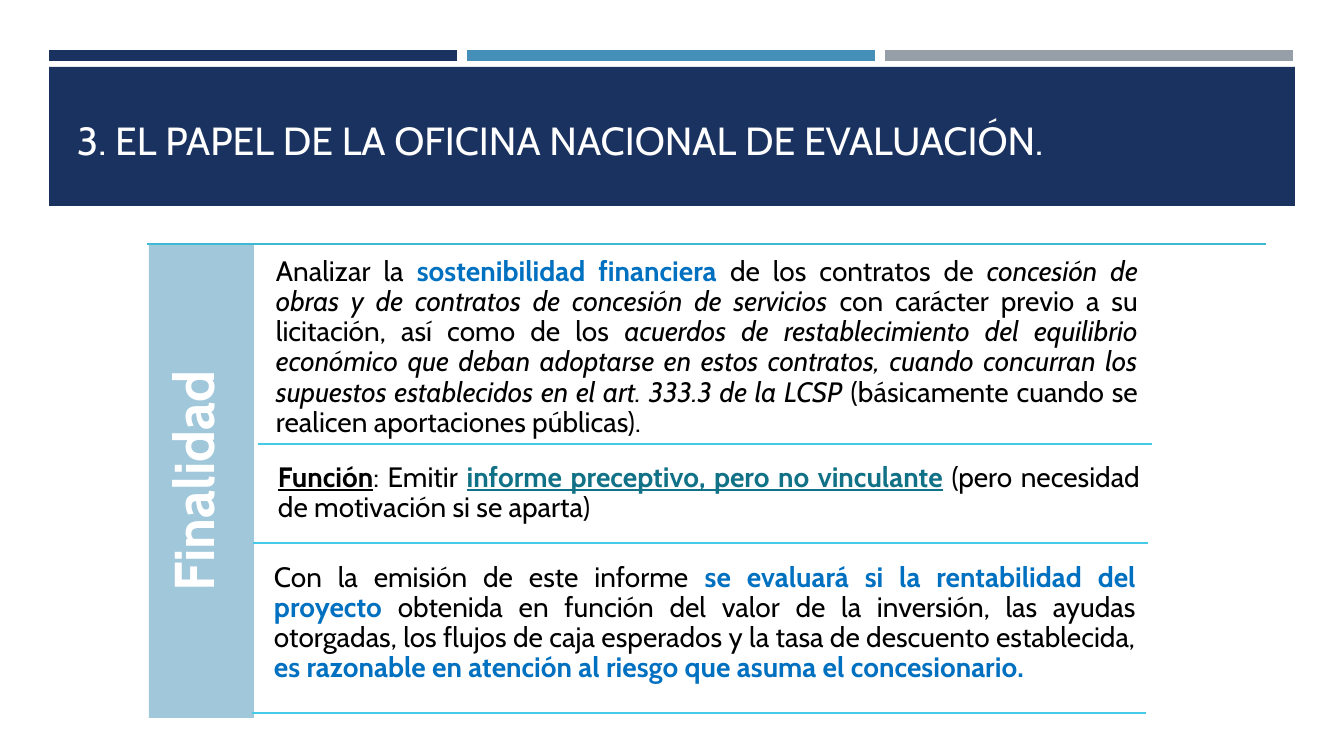
"""Build the slide on the role of the national evaluation office."""
from pptx import Presentation
from pptx.dml.color import RGBColor
from pptx.enum.shapes import MSO_CONNECTOR, MSO_SHAPE
from pptx.enum.text import MSO_ANCHOR, PP_ALIGN
from pptx.oxml.ns import qn
from pptx.util import Emu, Pt
from lxml import etree

RECT = MSO_SHAPE.RECTANGLE
STRAIGHT = MSO_CONNECTOR.STRAIGHT
TOP, BOTTOM = MSO_ANCHOR.TOP, MSO_ANCHOR.BOTTOM
LEFT, CENTER, JUSTIFY = PP_ALIGN.LEFT, PP_ALIGN.CENTER, PP_ALIGN.JUSTIFY

THEME = {
    "font": "Cabin", "title": 28, "label": 40, "body": 20, "rule": 1.75,
    "navy": "1A3260", "blue": "4590B8", "grey": "969FA7", "white": "FFFFFF",
    "black": "000000", "accent": "0070C0", "teal": "117186",
    "top_rule": "3FB8D3", "rule_color": "45CBE8",
}

PLAIN = {}
ITALIC = {"italic": True}
ACCENT = {"bold": True, "color": "accent"}
TITLE = [("3. EL PAPEL DE LA OFICINA NACIONAL DE EVALUACIÓN.", PLAIN)]
LABEL = [("Finalidad", {"bold": True})]
PURPOSE = [
    ("Analizar la ", PLAIN),
    ("sostenibilidad financiera ", ACCENT),
    ("de los contratos de ", PLAIN),
    ("concesión de obras y de contratos de concesión de servicios ", ITALIC),
    ("con carácter previo a su licitación, así como de los ", PLAIN),
    ("acuerdos de restablecimiento del equilibrio económico que deban "
     "adoptarse en estos contratos, cuando concurran los supuestos "
     "establecidos en el art. 333.3 de la LCSP ", ITALIC),
    ("(básicamente cuando se realicen aportaciones públicas).", PLAIN),
]
FUNCTION = [
    ("Función", {"bold": True, "underline": True}),
    (": Emitir ", PLAIN),
    ("informe preceptivo, pero no vinculante",
     {"bold": True, "underline": True, "color": "teal"}),
    (" (pero necesidad de motivación si se aparta)", PLAIN),
]
RESULT = [
    ("Con la emisión de este informe", PLAIN),
    (" se evaluará si la rentabilidad del proyecto ", ACCENT),
    ("obtenida en función del valor de la inversión, las ayudas otorgadas, "
     "los flujos de caja esperados y la tasa de descuento establecida, ", PLAIN),
    ("es razonable en atención al riesgo que asuma el concesionario.", ACCENT),
]

BODY_W = 878
BODIES = [(PURPOSE, 268, 249, 226), (FUNCTION, 270, 455, 119), (RESULT, 266, 555, 111)]
RULES = [
    (147, 1266, 244, "top_rule"), (258, 1152, 444, "rule_color"),
    (253, 1148, 543, "rule_color"), (252, 1146, 713, "rule_color"),
]
STRIPES = ["navy", "blue", "grey"]
BAND_X, BAND_W, STRIPE_GAP = 49, 1246, 10
STRIPE_W = (BAND_W - STRIPE_GAP * (len(STRIPES) - 1)) // len(STRIPES)


def px(n):
    return Emu(round(n * 914400 / 100.8))


def rgb(name):
    return RGBColor.from_string(THEME[name])


def add_rect(s, x, y, w, h, color):
    sp = s.shapes.add_shape(RECT, px(x), px(y), px(w), px(h))
    sp.shadow.inherit = False
    sp.fill.solid()
    sp.fill.fore_color.rgb = rgb(color)
    sp.line.fill.background()
    return sp


def add_rule(s, x1, x2, y, color):
    line = s.shapes.add_connector(STRAIGHT, px(x1), px(y), px(x2), px(y))
    line.line.color.rgb = rgb(color)
    line.line.width = Pt(THEME["rule"])
    etree.SubElement(line._element.spPr, qn("a:effectLst"))


def add_text(sp, runs, size="body", color="black", align=JUSTIFY,
             anchor=TOP, inset=(8, 8), spacing=0.9):
    tf = sp.text_frame
    tf.word_wrap = True
    tf.vertical_anchor = anchor
    tf.margin_left = tf.margin_right = px(inset[0])
    tf.margin_top = tf.margin_bottom = px(inset[1])
    p = tf.paragraphs[0]
    p.alignment = align
    p.line_spacing = spacing
    for text, style in runs:
        r = p.add_run()
        r.text = text
        r.font.name = THEME["font"]
        r.font.size = Pt(THEME[size])
        r.font.color.rgb = rgb(style.get("color", color))
        r.font.bold = style.get("bold", False)
        r.font.italic = style.get("italic", False)
        r.font.underline = style.get("underline", False)


def add_box(s, x, y, w, h):
    return s.shapes.add_textbox(px(x), px(y), px(w), px(h))


def main():
    prs = Presentation()
    prs.slide_width, prs.slide_height = px(1344), px(756)
    s = prs.slides.add_slide(prs.slide_layouts[6])

    for i, color in enumerate(STRIPES):
        add_rect(s, BAND_X + i * (STRIPE_W + STRIPE_GAP), 50, STRIPE_W, 11, color)
    add_rect(s, BAND_X, 67, BAND_W, 139, "navy")
    add_text(add_box(s, 67, 59, 1216, 109), TITLE, size="title", color="white",
             align=LEFT, anchor=BOTTOM, inset=(10, 5), spacing=1.0)

    label = add_rect(s, 149, 244, 105, 474, "blue")
    fill_color = label._element.spPr.find(qn("a:solidFill"))[0]
    etree.SubElement(fill_color, qn("a:alpha"), val="50000")
    add_text(label, LABEL, size="label", color="white", align=CENTER, inset=(17, 17))
    label.text_frame._txBody.bodyPr.set("vert", "vert270")

    for rule in RULES:
        add_rule(s, *rule)
    for runs, x, y, h in BODIES:
        add_text(add_box(s, x, y, BODY_W, h), runs)

    prs.save("out.pptx")


if __name__ == "__main__":
    main()
